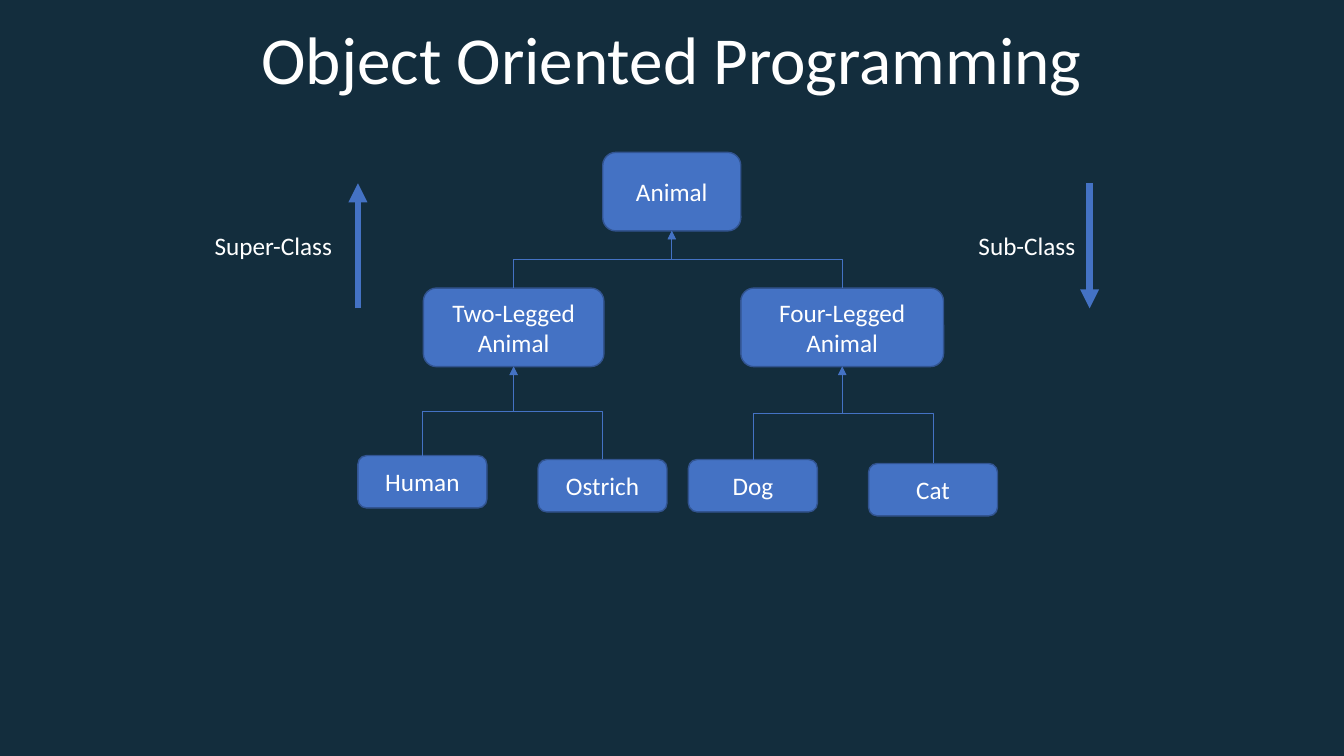
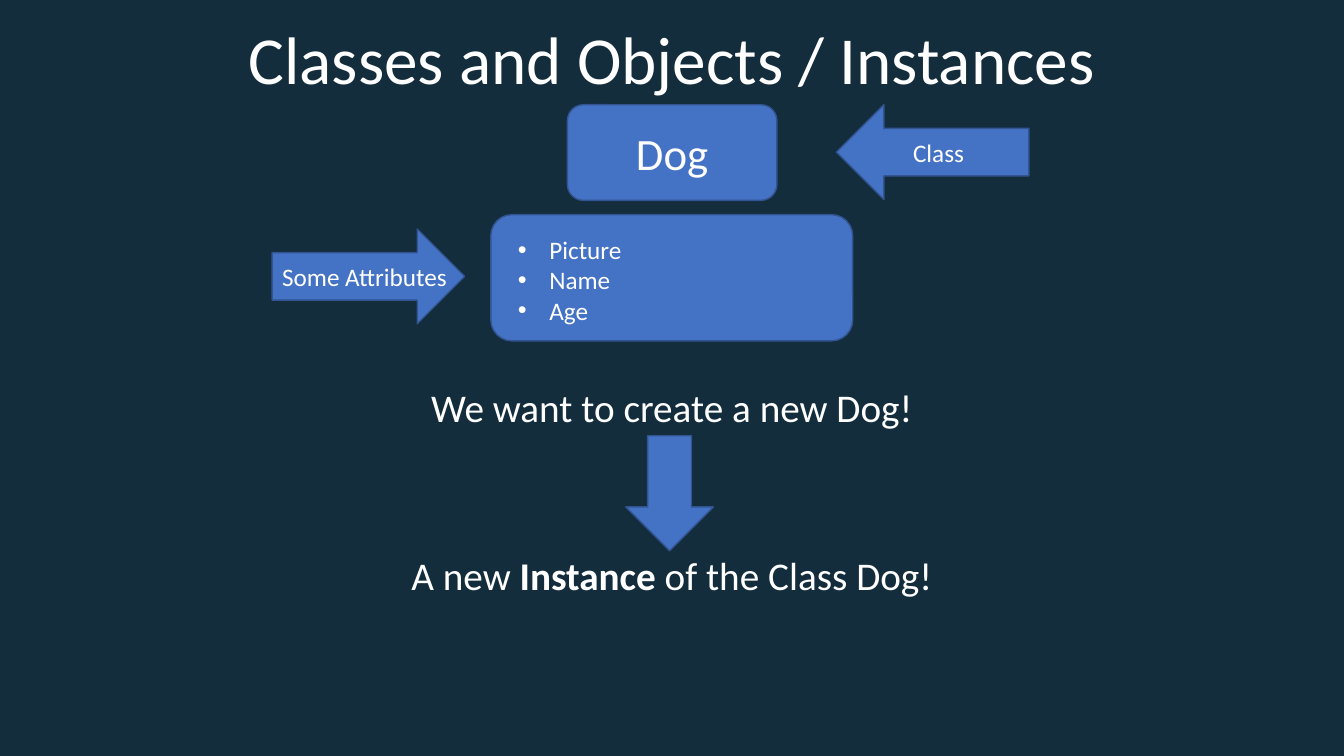
from lxml import etree
from pptx import Presentation
from pptx.dml.color import RGBColor
from pptx.enum.shapes import MSO_CONNECTOR, MSO_SHAPE
from pptx.enum.text import MSO_ANCHOR, MSO_AUTO_SIZE, PP_ALIGN
from pptx.oxml.ns import qn
from pptx.util import Cm, Pt

NAVY = RGBColor(0x13, 0x2D, 0x3D)
BLUE = RGBColor(0x44, 0x72, 0xC4)
EDGE = RGBColor(0x32, 0x54, 0x91)
WHITE = RGBColor(0xFF, 0xFF, 0xFF)
FONT = "Calibri"
LEFT, CENTER = PP_ALIGN.LEFT, PP_ALIGN.CENTER
TOP, MIDDLE = MSO_ANCHOR.TOP, MSO_ANCHOR.MIDDLE
ROUNDED = MSO_SHAPE.ROUNDED_RECTANGLE
LEFT_ARROW, RIGHT_ARROW = MSO_SHAPE.LEFT_ARROW, MSO_SHAPE.RIGHT_ARROW
DOWN_ARROW = MSO_SHAPE.DOWN_ARROW
STRAIGHT, ELBOW = MSO_CONNECTOR.STRAIGHT, MSO_CONNECTOR.ELBOW
TITLE_ONLY = 5
TOP_SITE, BOTTOM_SITE = 0, 2

TITLE_BOX = (5.64, 0.3, 22.58, 2.31)
CLASSES = {
    "Animal": (6.17, 0, 3.48, 1.98),
    "Two-Legged Animal": (1.65, 3.42, 4.55, 1.98),
    "Four-Legged Animal": (9.65, 3.42, 5.11, 1.98),
    "Human": (0, 7.64, 3.25, 1.32),
    "Ostrich": (4.54, 7.74, 3.25, 1.32),
    "Dog": (8.33, 7.74, 3.25, 1.32),
    "Cat": (12.87, 7.84, 3.25, 1.32),
}
CHILDREN = {
    "Animal": ("Two-Legged Animal", "Four-Legged Animal"),
    "Two-Legged Animal": ("Human", "Ostrich"),
    "Four-Legged Animal": ("Dog", "Cat"),
}


def to_cm(box):
    """Turn a tuple of numbers into centimetre lengths."""
    return [Cm(number) for number in box]


def style_paragraph(para, size, align=CENTER):
    """Give a paragraph the deck's font, colour and alignment."""
    para.alignment = align
    para.font.name = FONT
    para.font.size = Pt(size)
    para.font.color.rgb = WHITE


def add_page(deck, title):
    """Add a slide with its title in the shared style."""
    page = deck.slides.add_slide(deck.slide_layouts[TITLE_ONLY])
    heading = page.shapes.title
    heading.left, heading.top, heading.width, heading.height = to_cm(TITLE_BOX)
    frame = heading.text_frame
    frame.text = title
    frame.vertical_anchor = TOP
    frame.auto_size = MSO_AUTO_SIZE.NONE
    style_paragraph(frame.paragraphs[0], 48)
    return page


def add_block(page, kind, box, text="", size=18):
    """Add a blue preset shape with centred text."""
    shape = page.shapes.add_shape(kind, *to_cm(box))
    shape.shadow.inherit = False
    shape.fill.solid()
    shape.fill.fore_color.rgb = BLUE
    shape.line.color.rgb = EDGE
    shape.line.width = Pt(1)
    shape.text_frame.vertical_anchor = MIDDLE
    if text:
        shape.text_frame.text = text
        style_paragraph(shape.text_frame.paragraphs[0], size)
    return shape


def add_text(page, box, spans, size, align=CENTER, wrap=True):
    """Add one line of text from (text, bold) spans."""
    frame = page.shapes.add_textbox(*to_cm(box)).text_frame
    frame.word_wrap = wrap
    para = frame.paragraphs[0]
    style_paragraph(para, size, align)
    for text, bold in spans:
        span = para.add_run()
        span.text = text
        span.font.bold = bold


def style_connector(connector, width):
    """Colour a connector, drop its shadow and point its end."""
    connector.line.color.rgb = BLUE
    connector.line.width = Pt(width)
    properties = connector._element.spPr
    line = properties.find(qn("a:ln"))
    etree.SubElement(line, qn("a:tailEnd"), type="triangle")
    etree.SubElement(properties, qn("a:effectLst"))


def link_to_parent(page, child, parent, joint):
    """Draw an elbow arrow up from child to parent, turning at height joint."""
    start = child.left + child.width // 2
    end = parent.left + parent.width // 2
    parent_bottom = parent.top + parent.height
    rise, run = child.top - parent_bottom, abs(end - start)
    connector = page.shapes.add_connector(ELBOW, start, child.top, end, parent_bottom)
    connector.begin_connect(child, TOP_SITE)
    connector.end_connect(parent, BOTTOM_SITE)
    connector.left = (start + end - rise) // 2
    connector.top = (child.top + parent_bottom - run) // 2
    connector.width, connector.height = rise, run
    properties = connector._element.spPr
    frame = properties.find(qn("a:xfrm"))
    frame.set("rot", str(270 * 60000))
    frame.set("flipH", "0")
    frame.set("flipV", "1" if start > end else "0")
    guides = properties.find(qn("a:prstGeom")).find(qn("a:avLst"))
    turn = round((child.top - joint) / rise * 100000)
    etree.SubElement(guides, qn("a:gd"), name="adj1", fmla=f"val {turn}")
    style_connector(connector, 0.5)


def add_class_tree(page, left, top):
    """Draw the class hierarchy from its top left corner."""
    nodes = {
        name: add_block(page, ROUNDED, (left + x, top + y, width, height), name)
        for name, (x, y, width, height) in CLASSES.items()
    }
    for name, children in CHILDREN.items():
        parent = nodes[name]
        joint = (parent.top + parent.height + nodes[children[0]].top) // 2
        for child in children:
            link_to_parent(page, nodes[child], parent, joint)


def add_direction(page, box, label, upward):
    """Draw a label with a vertical arrow on the right edge of the box."""
    left, top, width, height = box
    edge, ends = left + width, [top, top + height]
    if upward:
        ends.reverse()
    arrow = page.shapes.add_connector(
        STRAIGHT, Cm(edge), Cm(ends[0]), Cm(edge), Cm(ends[1]))
    style_connector(arrow, 4.5)
    add_text(page, (left, top + 1.07, width, 1.02), [(label, None)], 18, LEFT, False)


def add_attribute_list(page, box, names):
    """Draw a rounded panel with a bulleted list."""
    frame = add_block(page, ROUNDED, box).text_frame
    frame.margin_left, frame.margin_top = Cm(0.53), Cm(0.23)
    for index, name in enumerate(names):
        para = frame.paragraphs[0] if index == 0 else frame.add_paragraph()
        para.text = name
        style_paragraph(para, 18, LEFT)
        properties = para._p.get_or_add_pPr()
        properties.set("marL", str(Cm(0.79)))
        properties.set("indent", str(-Cm(0.79)))
        bullet_font = etree.Element(qn("a:buFont"), typeface="Arial")
        bullet = etree.Element(qn("a:buChar"), char="•")
        properties.insert(0, bullet_font)
        properties.insert(1, bullet)


def add_pointer(page, kind, left, top, label, margins):
    """Draw a labelled block arrow with the given left and right margins."""
    frame = add_block(page, kind, (left, top, 4.85, 2.39), label).text_frame
    frame.word_wrap = False
    frame.margin_left, frame.margin_right = to_cm(margins)


def add_creation_steps(page, left, top):
    """Draw two statements with a down arrow between them."""
    width, height = 14.86, 1.45
    add_text(page, (left, top, width, height),
             [("We want to create a new Dog!", None)], 28)
    add_block(page, DOWN_ARROW, (left + 6.27, top + 1.45, 2.21, 2.9))
    add_text(page, (left, top + 4.24, width, height),
             [("A new ", None), ("Instance", True), (" of the Class Dog!", None)], 28)


def build_hierarchy_page(deck):
    """Build the slide on class inheritance."""
    page = add_page(deck, "Object Oriented Programming")
    add_class_tree(page, 9.02, 3.84)
    add_direction(page, (5.16, 4.62, 3.86, 3.15), "Super-Class", True)
    add_direction(page, (24.41, 4.62, 3.05, 3.15), "Sub-Class", False)


def build_instance_page(deck):
    """Build the slide on classes and instances."""
    page = add_page(deck, "Classes and Objects / Instances")
    add_block(page, ROUNDED, (14.3, 2.64, 5.28, 2.41), "Dog", 32)
    add_attribute_list(page, (12.37, 5.41, 9.12, 3.18), ("Picture", "Name", "Age"))
    add_pointer(page, RIGHT_ARROW, 6.86, 5.77, "Some Attributes", (0.4, 0))
    add_pointer(page, LEFT_ARROW, 21.08, 2.64, "Class", (0, 0.3))
    add_creation_steps(page, 9.5, 9.53)


def main():
    """Build and save the deck."""
    deck = Presentation()
    deck.slide_width, deck.slide_height = Cm(33.87), Cm(19.05)
    background = deck.slide_master.background.fill
    background.solid()
    background.fore_color.rgb = NAVY
    build_hierarchy_page(deck)
    build_instance_page(deck)
    deck.save("out.pptx")


if __name__ == "__main__":
    main()
